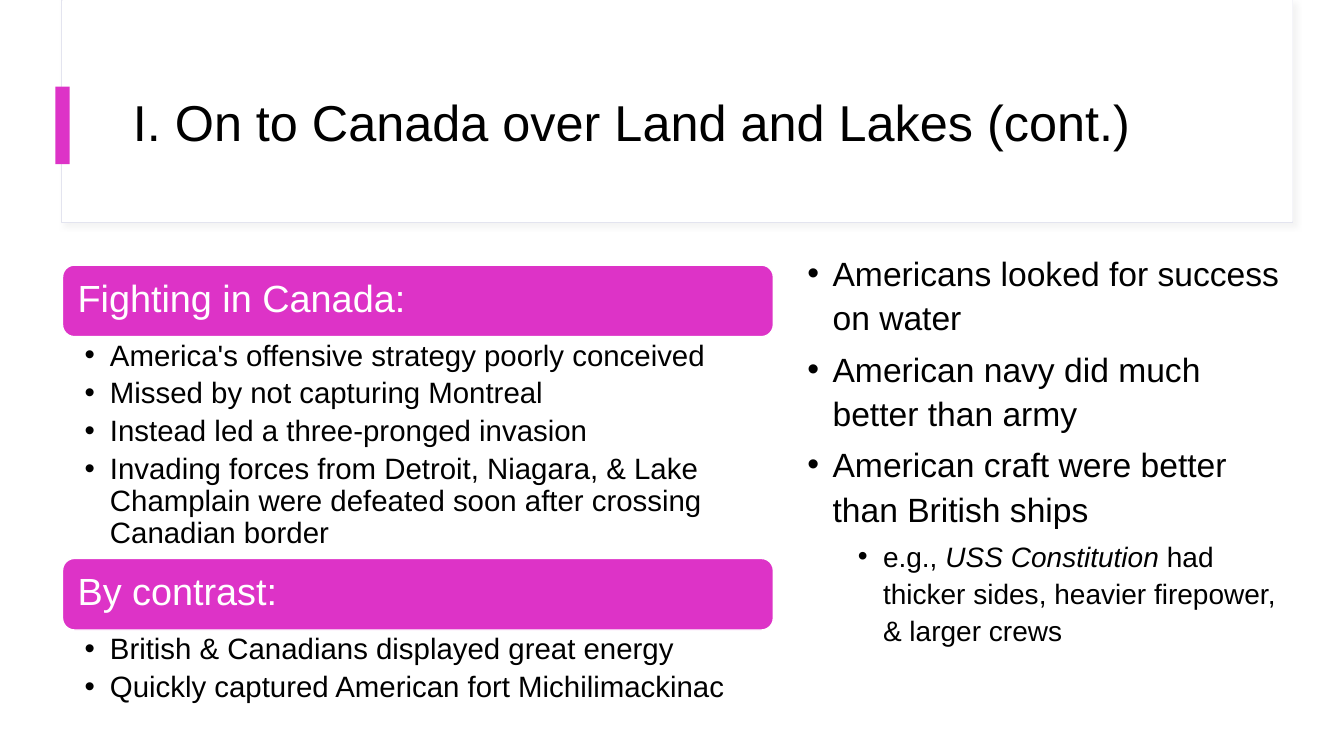
from lxml.etree import SubElement
from pptx import Presentation
from pptx.dml.color import RGBColor
from pptx.enum.shapes import MSO_SHAPE
from pptx.enum.text import MSO_ANCHOR, PP_ALIGN
from pptx.oxml.ns import qn
from pptx.util import Pt

PX = 9144  # 100 px to the inch
BLACK = RGBColor(0x00, 0x00, 0x00)
WHITE = RGBColor(0xFF, 0xFF, 0xFF)
MAGENTA = RGBColor(0xDD, 0x33, 0xC7)
FRAME_GREY = RGBColor(0xE3, 0xE4, 0xEF)

presentation = Presentation()
presentation.slide_width = 1333 * PX
presentation.slide_height = 750 * PX
slide = presentation.slides.add_slide(presentation.slide_layouts[6])


def add_box(kind, box, fill, line=None, line_width=1):
    shape = slide.shapes.add_shape(kind, *(length * PX for length in box))
    shape.shadow.inherit = False
    shape.fill.solid()
    shape.fill.fore_color.rgb = fill
    if line is None:
        shape.line.fill.background()
    else:
        shape.line.color.rgb = line
        shape.line.width = Pt(line_width)
    return shape


def add_text(box, paragraphs, color=BLACK, insets=(10, 5, 10, 5),
             anchor=MSO_ANCHOR.TOP, **spacing):
    """Each paragraph is (size, bullet indent in px or None, runs); every second run is italic."""
    frame = slide.shapes.add_textbox(*(length * PX for length in box)).text_frame
    frame.word_wrap = True
    frame.vertical_anchor = anchor
    for side, inset in zip(("left", "top", "right", "bottom"), insets):
        setattr(frame, f"margin_{side}", inset * PX)
    for index, (size, indent, runs) in enumerate(paragraphs):
        paragraph = frame.paragraphs[0] if index == 0 else frame.add_paragraph()
        paragraph.alignment = PP_ALIGN.LEFT
        for name, value in spacing.items():
            setattr(paragraph, name, value)
        if indent is not None:
            properties = paragraph._p.get_or_add_pPr()
            properties.set("marL", str(indent * PX))
            properties.set("indent", str(-25 * PX))
            SubElement(properties, qn("a:buFont"), typeface="Arial")
            SubElement(properties, qn("a:buChar"), char="•")
        for position, text in enumerate(runs):
            run = paragraph.add_run()
            run.text = text
            font_format = {"name": "Arial", "size": Pt(size), "italic": position % 2 == 1}
            for name, value in font_format.items():
                setattr(run.font, name, value)
            run.font.color.rgb = color


# Title band
title_frame = add_box(MSO_SHAPE.RECTANGLE, (61, 0, 1221, 221), WHITE, FRAME_GREY, 0.75)
effects = title_frame._element.spPr.find(qn("a:effectLst"))
shadow = SubElement(effects, qn("a:outerShdw"), blurRad=str(Pt(4)), dist=str(Pt(3)),
                    dir="2700000", algn="tl", rotWithShape="0")
shadow_color = SubElement(shadow, qn("a:srgbClr"), val="D9D9D9")
SubElement(shadow_color, qn("a:alpha"), val="30000")
add_box(MSO_SHAPE.RECTANGLE, (62, 0, 1220, 220), WHITE)
add_box(MSO_SHAPE.RECTANGLE, (55, 86, 14, 77), MAGENTA)
add_text((122, 60, 1112, 129), [(36, None, ["I. On to Canada over Land and Lakes (cont.)"])],
         anchor=MSO_ANCHOR.MIDDLE, line_spacing=0.9)

# Left column: headings with their points
sections = [
    (263, 220, "Fighting in Canada:", [
        "America's offensive strategy poorly conceived",
        "Missed by not capturing Montreal",
        "Instead led a three-pronged invasion",
        "Invading forces from Detroit, Niagara, & Lake Champlain were defeated "
        "soon after crossing Canadian border",
    ]),
    (554, 79, "By contrast:", [
        "British & Canadians displayed great energy",
        "Quickly captured American fort Michilimackinac",
    ]),
]
for top, points_height, heading, points in sections:
    add_box(MSO_SHAPE.ROUNDED_RECTANGLE, (62, top, 705, 71), MAGENTA, WHITE)
    add_text((66, top + 3, 698, 64), [(27, None, [heading])], WHITE, (11, 11, 11, 11),
             MSO_ANCHOR.MIDDLE, line_spacing=0.9)
    add_text((62, top + 71, 705, points_height), [(21, 25, [point]) for point in points],
             insets=(22, 4, 21, 4), line_spacing=0.9, space_after=Pt(4.4))

# Right column
add_text((741, 242, 540, 404), [
    (24, 75, ["Americans looked for success on water"]),
    (24, 75, ["American navy did much better than army"]),
    (24, 75, ["American craft were better than British ships"]),
    (20, 125, ["e.g., ", "USS Constitution", " had thicker sides, heavier firepower, & larger crews"]),
], line_spacing=1.1, space_before=Pt(5))

presentation.save("out.pptx")
